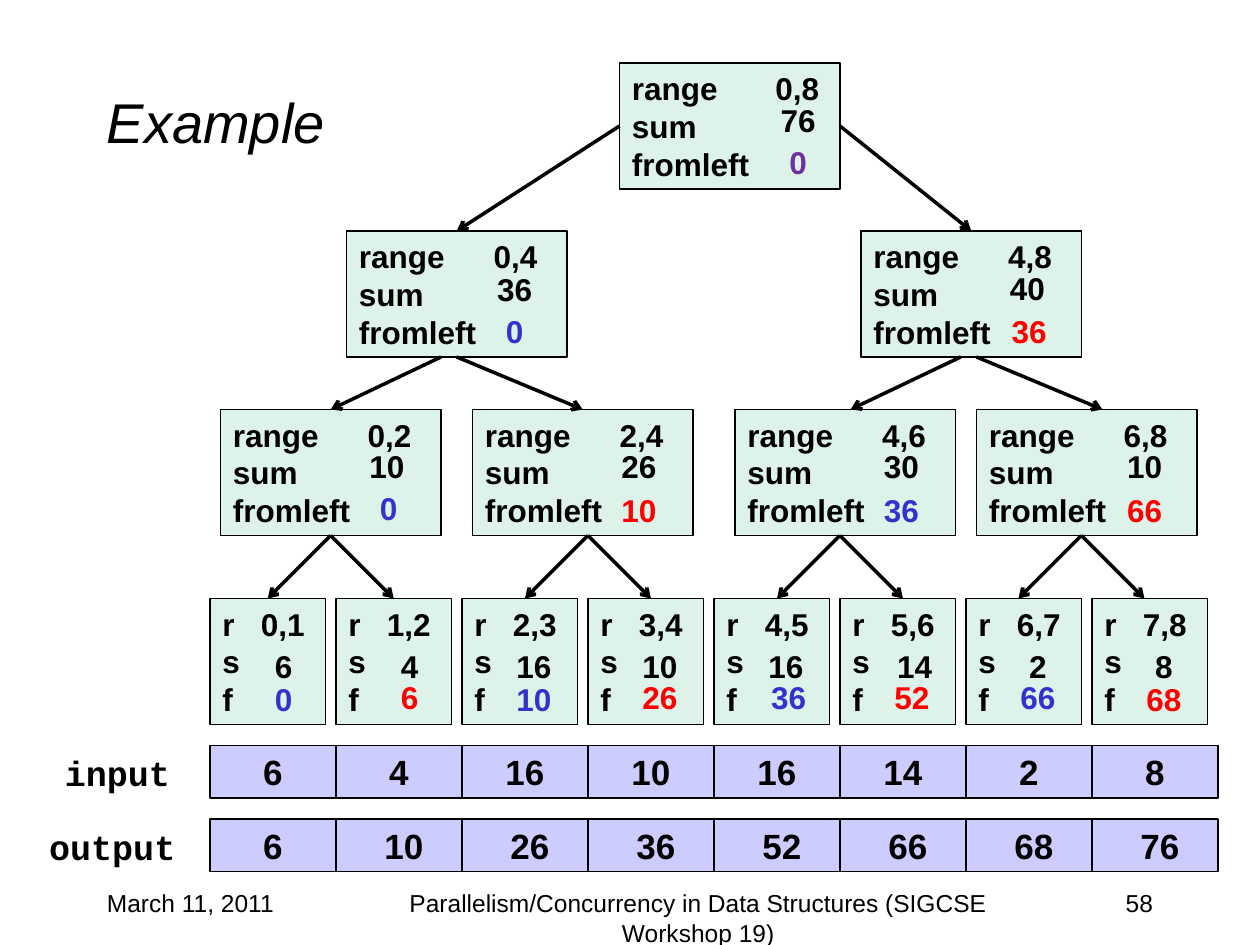
from dataclasses import dataclass

from lxml.etree import SubElement
from pptx import Presentation
from pptx.dml.color import RGBColor
from pptx.enum.shapes import MSO_CONNECTOR, MSO_SHAPE
from pptx.enum.text import MSO_ANCHOR as Anchor, MSO_AUTO_SIZE as AutoSize, PP_ALIGN as Align
from pptx.oxml.ns import qn
from pptx.util import Pt

COLORS = {
    "black": "000000",
    "node": "DDF3EA",
    "cell": "CCCCFF",
    "purple": "7030A0",
    "blue": "3333CC",
    "red": "FF0000",
}
NODE_HEIGHT, INNER_WIDTH, LEAF_WIDTH = 72, 126, 66
CELL_WIDTH, CELL_HEIGHT, ARRAY_LEFT = 72, 30, 120
LEAF_TOP = 342


@dataclass
class Node:
    left: float
    top: float
    label: str
    total: int
    total_at: tuple[float, float]
    from_left: int
    from_left_at: tuple[float, float]
    color: str
    width: float = INNER_WIDTH


@dataclass
class Arrow:
    start: tuple[float, float]
    end: tuple[float, float]


def inner(left: float, top: float, span: str, *values) -> Node:
    return Node(left, top, f"range\t {span}\nsum\nfromleft", *values)


def leaf(index: int, total: int, total_x: float, from_left: int,
         from_left_at: tuple[float, float], color: str) -> Node:
    return Node(ARRAY_LEFT + index * CELL_WIDTH, LEAF_TOP,
                f"r   {index},{index + 1}\ns\nf", total, (total_x, 366),
                from_left, from_left_at, color, LEAF_WIDTH)


INNER_NODES = [
    inner(354, 36, " 0,8", 76, (439, 54), 0, (444, 78), "purple"),
    inner(198, 132, "0,4", 36, (277, 151), 0, (282, 175), "blue"),
    inner(492, 132, "4,8", 40, (570, 150), 36, (571, 175), "red"),
    inner(126, 234, "0,2", 10, (204, 252), 0, (210, 276), "blue"),
    inner(270, 234, "2,4", 26, (348, 252), 10, (348, 277), "red"),
    inner(420, 234, "4,6", 30, (498, 252), 36, (498, 277), "blue"),
    inner(558, 234, "6,8", 10, (637, 252), 66, (637, 277), "red"),
]
LEAVES = [
    leaf(0, 6, 150, 0, (150, 385), "blue"),
    leaf(1, 4, 222, 6, (222, 384), "red"),
    leaf(2, 16, 288, 10, (288, 385), "blue"),
    leaf(3, 10, 360, 26, (360, 384), "red"),
    leaf(4, 16, 432, 36, (433.5, 384), "blue"),
    leaf(5, 14, 505.5, 52, (504, 384), "red"),
    leaf(6, 2, 581, 66, (576, 384), "blue"),
    leaf(7, 8, 653, 68, (648, 385), "red"),
]
ARROWS = [
    Arrow((354, 72), (261, 132)),
    Arrow((480, 72), (555, 132)),
    Arrow((252, 204), (189, 234)),
    Arrow((261, 204), (333, 234)),
    Arrow((549, 204), (486, 234)),
    Arrow((558, 204), (630, 234)),
] + [
    Arrow((parent, 306), (parent + step, LEAF_TOP))
    for parent in (189, 336, 480, 618) for step in (-36, 36)
]


def rgb(name: str) -> RGBColor:
    return RGBColor.from_string(COLORS[name])


def write(frame, text: str, size: float, color: str = "black", bold: bool = False,
          italic: bool = False, font: str = "Arial", align=Align.LEFT) -> None:
    frame.text = text
    for paragraph in frame.paragraphs:
        paragraph.alignment = align
        for run in paragraph.runs:
            run.font.name = font
            run.font.size = Pt(size)
            run.font.bold = bold
            run.font.italic = italic
            run.font.color.rgb = rgb(color)


def add_text(slide, left: float, top: float, width: float, height: float, text: str,
             size: float, fit: bool = False, anchor=Anchor.TOP, **style) -> None:
    frame = slide.shapes.add_textbox(Pt(left), Pt(top), Pt(width), Pt(height)).text_frame
    frame.word_wrap = not fit
    frame.auto_size = AutoSize.SHAPE_TO_FIT_TEXT if fit else AutoSize.NONE
    frame.vertical_anchor = anchor
    write(frame, text, size, **style)


def add_box(slide, left: float, top: float, width: float, height: float, fill: str):
    box = slide.shapes.add_shape(MSO_SHAPE.RECTANGLE, Pt(left), Pt(top), Pt(width), Pt(height))
    box.shadow.inherit = False
    box.fill.solid()
    box.fill.fore_color.rgb = rgb(fill)
    box.line.color.rgb = rgb("black")
    box.line.width = Pt(0.75)
    return box.text_frame


def add_array(slide, top: float, entries: list[str]) -> None:
    for index, entry in enumerate(entries):
        frame = add_box(slide, ARRAY_LEFT + index * CELL_WIDTH, top,
                        CELL_WIDTH, CELL_HEIGHT, "cell")
        frame.word_wrap = False
        frame.vertical_anchor = Anchor.MIDDLE
        write(frame, entry, 20, bold=True, align=Align.CENTER)


def add_node(slide, node: Node) -> None:
    frame = add_box(slide, node.left, node.top, node.width, NODE_HEIGHT, "node")
    frame.word_wrap = True
    frame.vertical_anchor = Anchor.TOP
    write(frame, node.label, 18, bold=True)


def add_value(slide, value: int, at: tuple[float, float], color: str) -> None:
    digits = str(value)
    add_text(slide, *at, 14.5 + 10 * len(digits), 29, digits, 18,
             fit=True, color=color, bold=True)


def add_arrow(slide, arrow: Arrow) -> None:
    ends = [Pt(length) for length in (*arrow.start, *arrow.end)]
    connector = slide.shapes.add_connector(MSO_CONNECTOR.STRAIGHT, *ends)
    connector.line.color.rgb = rgb("black")
    connector.line.width = Pt(2)
    SubElement(connector.line._get_or_add_ln(), qn("a:tailEnd"), type="arrow")
    SubElement(connector._element.spPr, qn("a:effectLst"))


def main() -> None:
    prs = Presentation()
    prs.slide_width, prs.slide_height = Pt(720), Pt(540)
    slide = prs.slides.add_slide(prs.slide_layouts[6])

    # Title and footer
    add_text(slide, 54, 24, 612, 90, "Example", 32, anchor=Anchor.MIDDLE, italic=True)
    add_text(slide, 516, 504, 150, 36, "58", 14, align=Align.RIGHT)
    add_text(slide, 198, 504, 402, 36,
             "Parallelism/Concurrency in Data Structures (SIGCSE Workshop 19)",
             14, align=Align.CENTER)
    add_text(slide, 54, 504, 150, 36, "March 11, 2011", 14)

    # Input and output arrays
    for name, left, top, width in (("input", 30, 426, 75), ("output", 21, 468, 87)):
        add_text(slide, left, top, width, 31.5, name, 20, fit=True,
                 bold=True, font="Courier New")
    running, prefix_sums = 0, []
    for item in LEAVES:
        running += item.total
        prefix_sums.append(f" {running}" if prefix_sums else str(running))
    add_array(slide, 426, [str(item.total) for item in LEAVES])
    add_array(slide, 468, prefix_sums)

    # Tree: boxes, arrows, then the values on top
    nodes = INNER_NODES + LEAVES
    for node in nodes:
        add_node(slide, node)
    for arrow in ARROWS:
        add_arrow(slide, arrow)
    for node in nodes:
        add_value(slide, node.total, node.total_at, "black")
        add_value(slide, node.from_left, node.from_left_at, node.color)

    prs.save("out.pptx")


if __name__ == "__main__":
    main()
